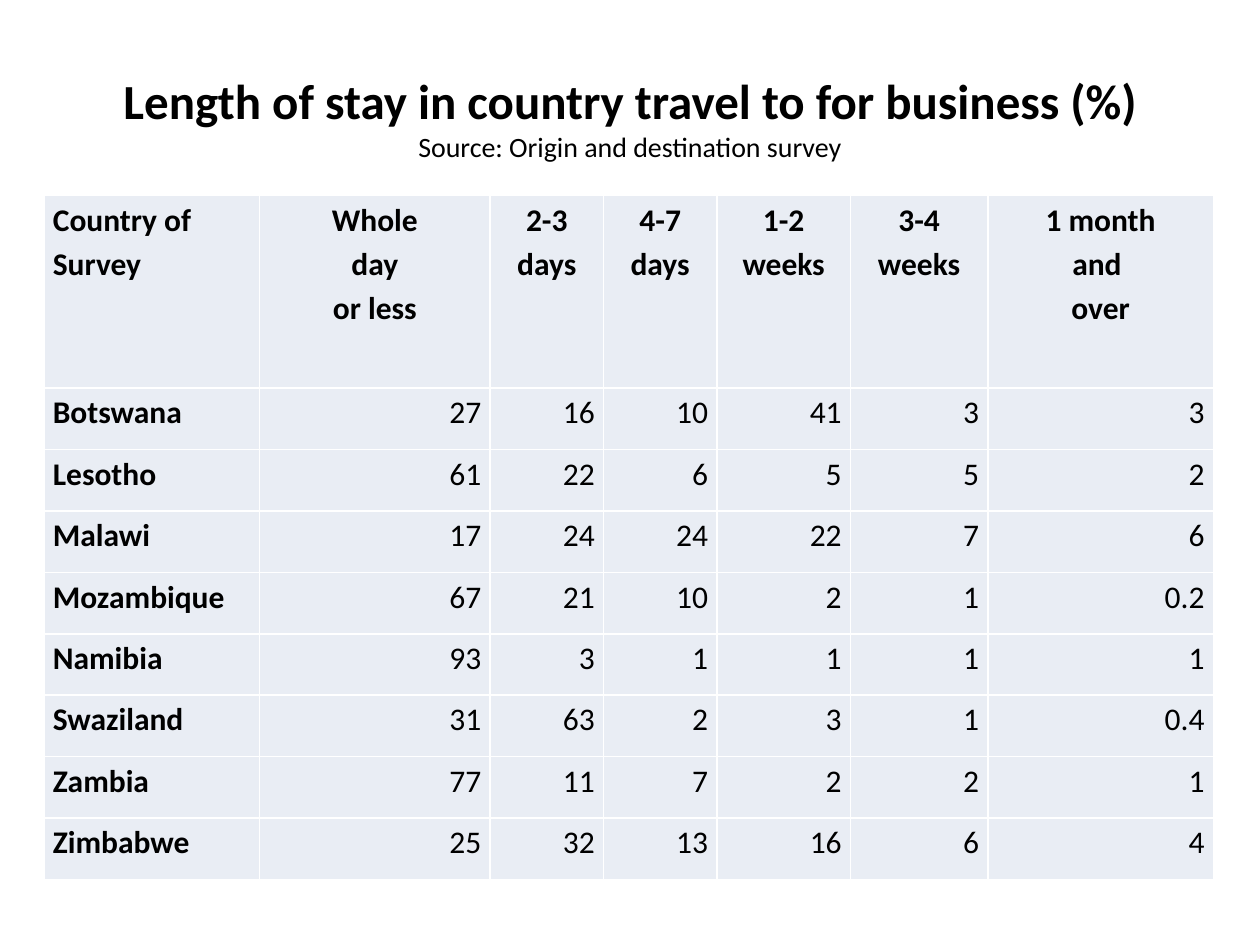
"""Build a slide with a table of business stay lengths by country."""
from lxml.etree import SubElement as Sub
from pptx import Presentation
from pptx.dml.color import RGBColor
from pptx.enum.text import MSO_ANCHOR as Anchor, PP_ALIGN as Align
from pptx.oxml.ns import qn
from pptx.util import Inches, Pt


def tint(fill, code):
    fill.solid()
    fill.fore_color.rgb = RGBColor.from_string(code)


def write(par, text, size=18, bold=False, align=Align.LEFT, gap=1.0):
    par.alignment, par.line_spacing = align, gap
    run = par.add_run()
    run.text = text
    run.font.name, run.font.size, run.font.bold = "Calibri", Pt(size), bold
    tint(run.font.fill, "000000")


deck = Presentation()
deck.slide_width, deck.slide_height = Inches(10), Inches(7.5)
wide, high = deck.slide_width / 100, deck.slide_height / 100
slide = deck.slides.add_slide(deck.slide_layouts[6])

box = slide.shapes.add_textbox(int(5 * wide), int(4 * high), int(90 * wide), int(16.67 * high))
frame = box.text_frame
frame.word_wrap, frame.vertical_anchor = True, Anchor.MIDDLE
title = frame.paragraphs[0]
write(title, "Length of stay in country travel to for business (%)", size=28, bold=True, align=Align.CENTER)
title.add_line_break()
write(title, "Source: Origin and destination survey", size=16, align=Align.CENTER)

data = [
    ["Country of\nSurvey", "Whole\nday\nor less", "2-3 days", "4-7 days",
     "1-2 weeks", "3-4 weeks", "1 month\nand \nover"],
    ["Botswana", 27, 16, 10, 41, 3, 3],
    ["Lesotho", 61, 22, 6, 5, 5, 2],
    ["Malawi", 17, 24, 24, 22, 7, 6],
    ["Mozambique", 67, 21, 10, 2, 1, 0.2],
    ["Namibia", 93, 3, 1, 1, 1, 1],
    ["Swaziland", 31, 63, 2, 3, 1, 0.4],
    ["Zambia", 77, 11, 7, 2, 2, 1],
    ["Zimbabwe", 25, 32, 13, 16, 6, 4],
]
cols = [17.1, 18.3, 9, 9, 10.6, 10.9, 17.9]
rows = [20.4] + [6.5] * 8

table = slide.shapes.add_table(
    len(rows), len(cols), int(3.5 * wide), int(20.67 * high),
    int(sum(cols) * wide), int(sum(rows) * high)).table
table.first_row = table.horz_banding = False
for col, share in zip(table.columns, cols):
    col.width = int(share * wide)
for row, share in zip(table.rows, rows):
    row.height = int(share * high)

for r, line in enumerate(data):
    for c, value in enumerate(line):
        cell = table.cell(r, c)
        cell.margin_left = cell.margin_right = Inches(0.07)
        cell.margin_top = cell.margin_bottom = 0
        props = cell._tc.get_or_add_tcPr()
        for side in "LRTB":
            edge = Sub(props, qn(f"a:ln{side}"), w=str(Pt(1)))
            Sub(Sub(edge, qn("a:solidFill")), qn("a:srgbClr"), val="FFFFFF")
        tint(cell.fill, "E9EDF4")
        align = Align.LEFT if c == 0 else Align.CENTER if r == 0 else Align.RIGHT
        for n, part in enumerate(str(value).split("\n")):
            text = cell.text_frame
            par = text.add_paragraph() if n else text.paragraphs[0]
            write(par, part, bold=r == 0 or c == 0, align=align, gap=1.15)

deck.save("out.pptx")
